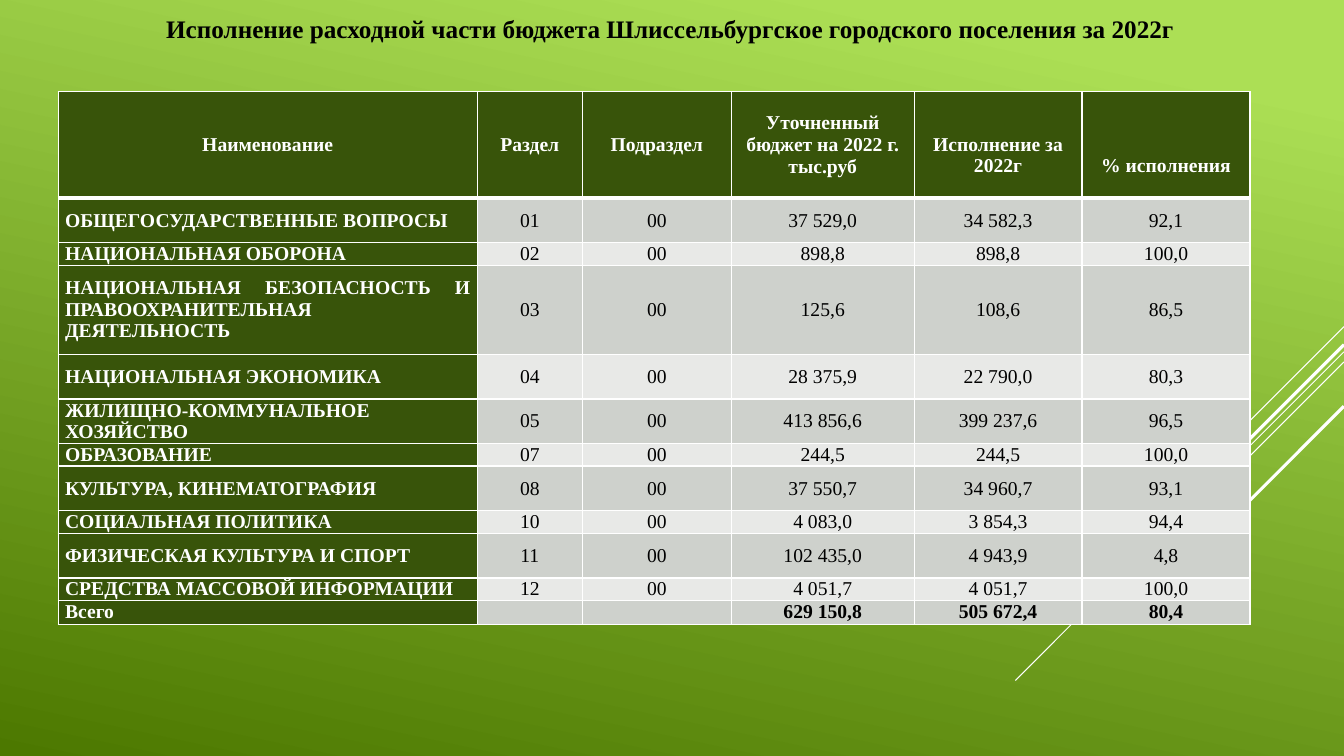
from dataclasses import dataclass
from lxml.etree import SubElement as Sub
from pptx import Presentation
from pptx.dml.color import RGBColor as RGB
from pptx.enum.shapes import MSO_CONNECTOR as Link
from pptx.enum.text import MSO_ANCHOR as Anchor, MSO_AUTO_SIZE as Fit, PP_ALIGN as Align
from pptx.oxml.ns import qn
from pptx.util import Pt


@dataclass(frozen=True)
class Theme:
    font: str = "Times New Roman"
    head: int = 18
    body: int = 14
    dark: str = "38540A"
    odd: str = "CED1CC"
    even: str = "E8E9E7"
    white: str = "FFFFFF"
    black: str = "000000"
    light: str = "ACDF55"
    deep: str = "4C7800"


WIDE, HIGH = 960, 540
TITLE = "Исполнение расходной части бюджета Шлиссельбургское городского поселения за 2022г"
RAYS = [(233.3, 72, 0.75), (251.3, 234.7, 0.75), (258.5, 149, 0.75), (246.2, 137.5, 2.25), (290.2, 100, 2.25)]
COLS = [299.5, 75, 106.5, 130.5, 120, 120]
ROWS = [76, 32, 16, 63.5, 32, 32, 16, 32, 16, 32, 16, 16]
DATA = [
    ["Наименование", "Раздел", "Подраздел", "Уточненный бюджет на 2022 г. тыс.руб", "Исполнение за 2022г", "% исполнения"],
    ["ОБЩЕГОСУДАРСТВЕННЫЕ ВОПРОСЫ", "01", "00", "37 529,0", "34 582,3", "92,1"],
    ["НАЦИОНАЛЬНАЯ ОБОРОНА", "02", "00", "898,8", "898,8", "100,0"],
    ["НАЦИОНАЛЬНАЯ БЕЗОПАСНОСТЬ И ПРАВООХРАНИТЕЛЬНАЯ ДЕЯТЕЛЬНОСТЬ", "03", "00", "125,6", "108,6", "86,5"],
    ["НАЦИОНАЛЬНАЯ ЭКОНОМИКА", "04", "00", "28 375,9", "22 790,0", "80,3"],
    ["ЖИЛИЩНО-КОММУНАЛЬНОЕ ХОЗЯЙСТВО", "05", "00", "413 856,6", "399 237,6", "96,5"],
    ["ОБРАЗОВАНИЕ", "07", "00", "244,5", "244,5", "100,0"],
    ["КУЛЬТУРА, КИНЕМАТОГРАФИЯ", "08", "00", "37 550,7", "34 960,7", "93,1"],
    ["СОЦИАЛЬНАЯ ПОЛИТИКА", "10", "00", "4 083,0", "3 854,3", "94,4"],
    ["ФИЗИЧЕСКАЯ КУЛЬТУРА И СПОРТ", "11", "00", "102 435,0", "4 943,9", "4,8"],
    ["СРЕДСТВА МАССОВОЙ ИНФОРМАЦИИ", "12", "00", "4 051,7", "4 051,7", "100,0"],
    ["Всего", "", "", "629 150,8", "505 672,4", "80,4"],
]


class Deck:
    """Draws the elements of the current slide in one theme."""

    def __init__(self, theme, slide):
        self.theme, self.slide = theme, slide

    def back(self):
        fill = self.slide.background.fill
        fill.gradient()
        fill.gradient_angle = 258
        tones = [(0.1, self.theme.light), (1, self.theme.deep)]
        for stop, (place, tone) in zip(fill.gradient_stops, tones):
            stop.position = place
            stop.color.rgb = RGB.from_string(tone)

    def ray(self, top, reach, width):
        line = self.slide.shapes.add_connector(
            Link.STRAIGHT, Pt(WIDE), Pt(top), Pt(WIDE - reach), Pt(top + reach))
        line.line.color.rgb = RGB.from_string(self.theme.white)
        line.line.width = Pt(width)
        Sub(line._element.spPr, qn("a:effectLst"))

    def label(self, par, text, size, tone, bold, align):
        par.alignment = align
        if not text:
            Sub(par._p, qn("a:endParaRPr"), sz=str(size * 100))
            return
        run = par.add_run()
        run.text = text
        font = run.font
        font.name, font.size, font.bold = self.theme.font, Pt(size), bold
        font.color.rgb = RGB.from_string(tone)

    def title(self, text):
        shape = self.slide.shapes.title
        shape.left, shape.top, shape.width, shape.height = Pt(23), Pt(6), Pt(911.5), Pt(29)
        frame = shape.text_frame
        frame.word_wrap, frame.auto_size = True, Fit.NONE
        frame.vertical_anchor = Anchor.TOP
        par = frame.paragraphs[0]
        par.line_spacing = 1.0
        self.label(par, text, self.theme.head, self.theme.black, True, Align.CENTER)

    def edge(self, cell, **sides):
        props = cell._tc.get_or_add_tcPr()
        for spot, (name, width) in enumerate(sides.items()):
            line = Sub(props, qn("a:" + name), w=str(Pt(width)))
            fill = Sub(line, qn("a:solidFill"))
            Sub(fill, qn("a:srgbClr"), val=self.theme.white)
            props.insert(spot, line)

    def cell(self, cell, text, row, col):
        theme = self.theme
        top, side = row == 0, col == 0
        dark = top or side
        cell.margin_left = cell.margin_right = Pt(5)
        cell.margin_top = 0
        low = top and col > 3
        cell.margin_bottom = Pt(15 if low else 0)
        cell.vertical_anchor = Anchor.BOTTOM if low else Anchor.MIDDLE
        cell.fill.solid()
        tone = theme.dark if dark else theme.odd if row % 2 else theme.even
        cell.fill.fore_color.rgb = RGB.from_string(tone)
        self.edge(cell, lnL=1, lnR=1, lnT=3 if row == 1 else 1, lnB=3 if top else 1)
        self.label(cell.text_frame.paragraphs[0], text, theme.body,
                   theme.white if dark else theme.black,
                   dark or row == len(DATA) - 1,
                   Align.JUSTIFY if side and not top else Align.CENTER)

    def table(self, left, top, cols, rows, data):
        frame = self.slide.shapes.add_table(
            len(rows), len(cols), Pt(left), Pt(top), Pt(sum(cols)), Pt(sum(rows)))
        grid = frame.table
        grid.horz_banding = False
        for col, width in zip(grid.columns, cols):
            col.width = Pt(width)
        for row, height in zip(grid.rows, rows):
            row.height = Pt(height)
        for row, line in enumerate(data):
            for col, text in enumerate(line):
                self.cell(grid.cell(row, col), text, row, col)


def main():
    show = Presentation()
    show.slide_width, show.slide_height = Pt(WIDE), Pt(HIGH)
    deck = Deck(Theme(), show.slides.add_slide(show.slide_layouts[5]))
    deck.back()
    for ray in RAYS:
        deck.ray(*ray)
    deck.title(TITLE)
    deck.table(41.5, 65.5, COLS, ROWS, DATA)
    show.save("out.pptx")


if __name__ == "__main__":
    main()
